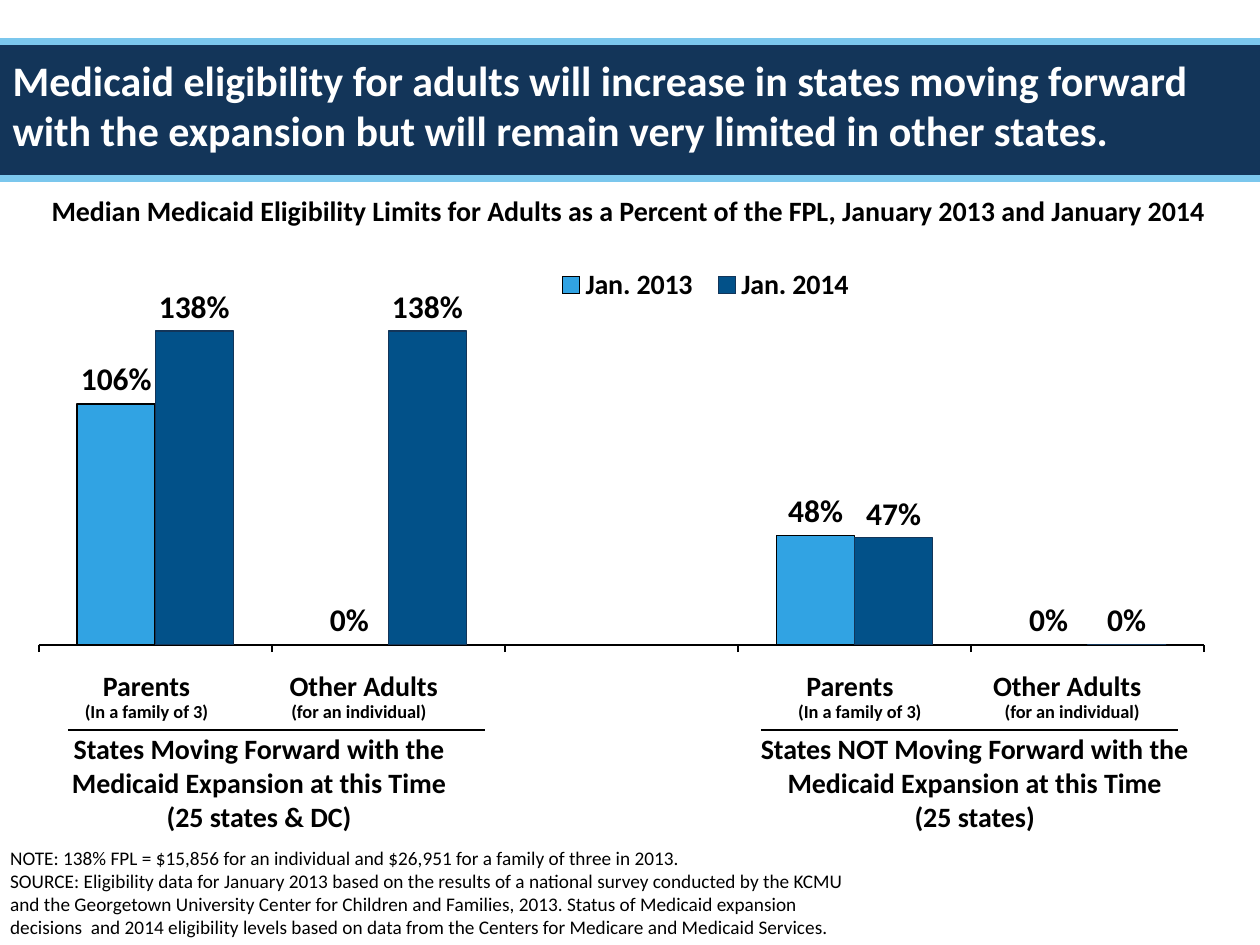
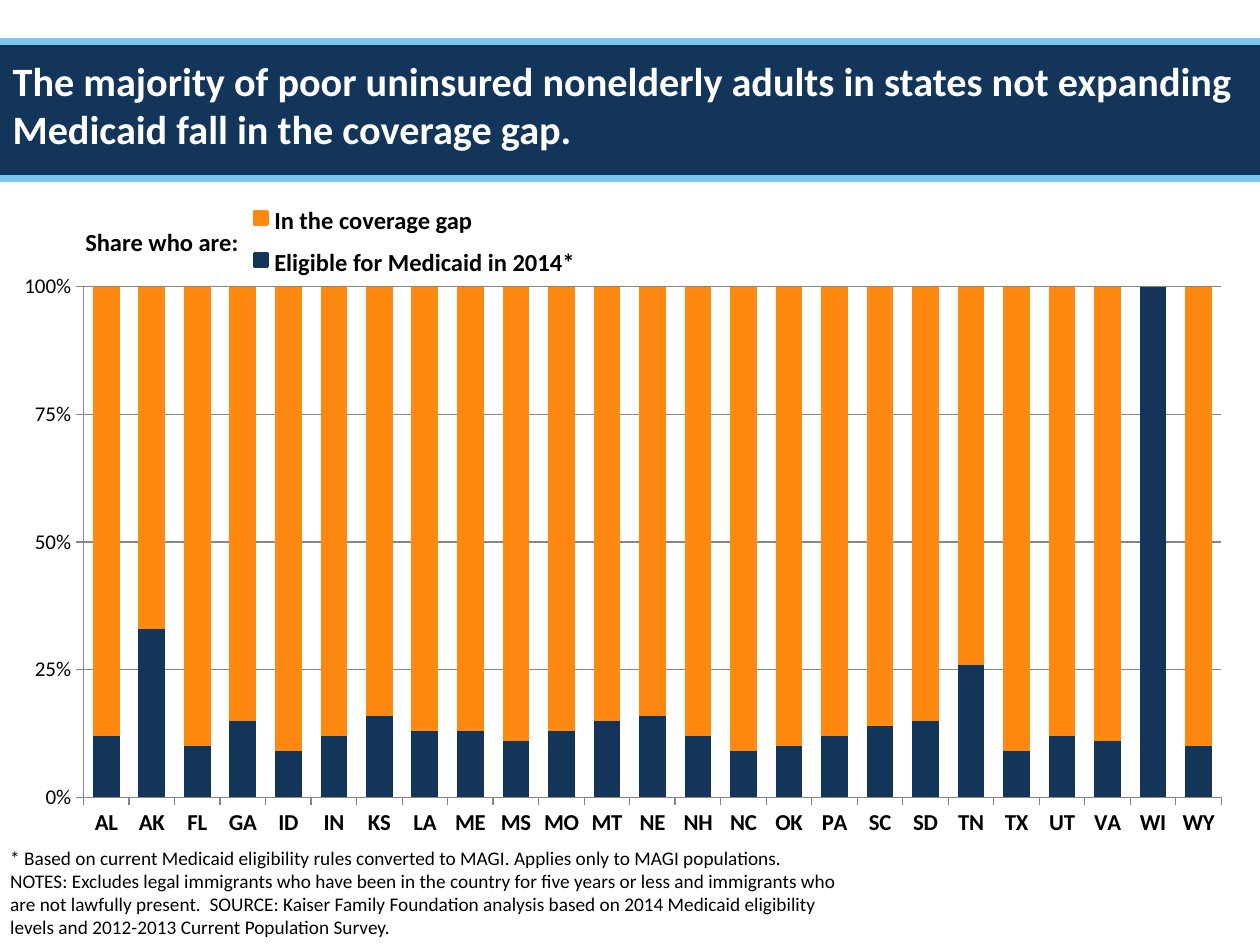
from pptx import Presentation
from pptx.chart.data import CategoryChartData
from pptx.dml.color import RGBColor
from pptx.enum.chart import (XL_CHART_TYPE, XL_LABEL_POSITION, XL_LEGEND_POSITION,
                             XL_TICK_LABEL_POSITION, XL_TICK_MARK)
from pptx.enum.shapes import MSO_CONNECTOR, MSO_SHAPE
from pptx.enum.text import MSO_ANCHOR, MSO_AUTO_SIZE, PP_ALIGN
from pptx.oxml import parse_xml
from pptx.oxml.ns import nsdecls, qn
from pptx.util import Cm, Pt

FONT = "Calibri"
NAVY, SKY, BLACK, WHITE = "133559", "7BC7ED", "000000", "FFFFFF"
BLUE, DEEP_BLUE, ORANGE, GRAY = "31A3E3", "025189", "FF8811", "868686"
SLIDE_WIDTH, BAND_TOP, BAND_BOTTOM = 25.4, 0.84, 3.6

COVERAGE_GAP = "In the coverage gap"
ELIGIBLE = "Eligible for Medicaid in 2014*"
STATES = ("AL AK FL GA ID IN KS LA ME MS MO MT NE NH NC OK PA SC SD TN TX UT VA "
          "WI WY").split()
ELIGIBLE_SHARES = [12, 33, 10, 15, 9, 12, 16, 13, 13, 11, 13, 15, 16, 12, 9, 10, 12,
                   14, 15, 26, 9, 12, 11, 100, 10]
GAP_SHARES = [88, 67, 90, 85, 91, 88, 84, 87, 87, 89, 87, 85, 84, 88, 91, 90, 88,
              86, 85, 74, 91, 88, 89, 0, 90]


def color(hex_code):
    return RGBColor.from_string(hex_code)


def place(shape, left, top, width, height):
    shape.left, shape.top = Cm(left), Cm(top)
    shape.width, shape.height = Cm(width), Cm(height)


def format_font(font, size, ink=BLACK, bold=False):
    font.name, font.size, font.bold = FONT, Pt(size), bold
    font.color.rgb = color(ink)


def write(frame, text, size=16, ink=BLACK, bold=True, align=PP_ALIGN.LEFT,
          anchor=MSO_ANCHOR.TOP, wrap=True):
    """Fill a text frame, one paragraph for each line of the text."""
    frame.word_wrap, frame.auto_size = wrap, MSO_AUTO_SIZE.NONE
    frame.vertical_anchor = anchor
    frame.text = text
    for para in frame.paragraphs:
        para.alignment = align
        para.space_before = Pt(0)
        for span in para.runs:
            format_font(span.font, size, ink, bold)


def add_text(page, text, left, top, width, height, **formats):
    box = page.shapes.add_textbox(Cm(left), Cm(top), Cm(width), Cm(height))
    write(box.text_frame, text, **formats)
    return box


def add_rectangle(page, left, top, width, height, fill, outline=None):
    box = page.shapes.add_shape(MSO_SHAPE.RECTANGLE, Cm(left), Cm(top), Cm(width),
                                Cm(height))
    box.shadow.inherit = False
    box.fill.solid()
    box.fill.fore_color.rgb = color(fill)
    if outline:
        box.line.color.rgb = color(fill)
        box.line.width = Pt(outline)
    else:
        box.line.fill.background()
    return box


def add_rule(page, left, top, length, ink=BLACK, weight=1):
    rule = page.shapes.add_connector(MSO_CONNECTOR.STRAIGHT, Cm(left), Cm(top),
                                     Cm(left + length), Cm(top))
    rule.line.color.rgb = color(ink)
    rule.line.width = Pt(weight)
    rule.element.spPr.append(parse_xml(f"<a:effectLst {nsdecls('a')}/>"))
    return rule


def move_band_to_layout(page, layout):
    """Draw the title band and put it behind everything on the shared layout."""
    band = [add_rectangle(page, 0, BAND_TOP, SLIDE_WIDTH, BAND_BOTTOM - BAND_TOP, NAVY)]
    band += [add_rule(page, 0, top, SLIDE_WIDTH, SKY, 3.7)
             for top in (BAND_TOP, BAND_BOTTOM)]
    for index, shape in enumerate(band, start=2):
        layout.shapes.element.insert(index, shape.element)


def fill_placeholders(page, title, title_size, notes):
    place(page.shapes.title, 0, BAND_TOP, SLIDE_WIDTH, 2.54)
    write(page.shapes.title.text_frame, title, size=title_size, ink=WHITE,
          anchor=MSO_ANCHOR.MIDDLE)
    body = page.placeholders[1]
    place(body, -0.05, 17.53, 17.4, 1.52)
    write(body.text_frame, notes, size=11, bold=False, anchor=MSO_ANCHOR.BOTTOM)
    for para in body.text_frame.paragraphs:
        properties = para._p.get_or_add_pPr()
        properties.set("marL", "0")
        properties.set("indent", "0")
        properties.append(parse_xml(f"<a:buNone {nsdecls('a')}/>"))


def set_layout(element, x, y, width, height, inner=False):
    """Fix a chart part at fractions of the chart's size."""
    old = element.find(qn("c:layout"))
    if old is not None:
        element.remove(old)
    target = '<c:layoutTarget val="inner"/>' if inner else ""
    layout = parse_xml(
        f"<c:layout {nsdecls('c')}><c:manualLayout>{target}"
        '<c:xMode val="edge"/><c:yMode val="edge"/>'
        f'<c:x val="{x}"/><c:y val="{y}"/><c:w val="{width}"/><c:h val="{height}"/>'
        "</c:manualLayout></c:layout>")
    element.insert(0 if element.find(qn("c:legendPos")) is None else 1, layout)


def add_column_chart(page, kind, frame, plot_frame, categories, series, gap):
    """Add a chart; series holds (name, values, fill color) triples."""
    data = CategoryChartData()
    data.categories = categories
    for name, values, _ in series:
        data.add_series(name, values)
    chart = page.shapes.add_chart(kind, *map(Cm, frame), data).chart
    format_font(chart.font, 18)
    chart.has_title = chart.has_legend = False
    chart.element.find(qn("c:chart")).addnext(parse_xml(
        f"<c:spPr {nsdecls('c', 'a')}><a:noFill/><a:ln><a:noFill/></a:ln></c:spPr>"))
    set_layout(chart.element.find(".//" + qn("c:plotArea")), *plot_frame, inner=True)
    plot = chart.plots[0]
    plot.gap_width, plot.vary_by_categories = gap, False
    for column, (_, _, fill) in zip(plot.series, series):
        column.invert_if_negative = False
        column.format.fill.solid()
        column.format.fill.fore_color.rgb = color(fill)
    chart.category_axis.major_tick_mark = XL_TICK_MARK.OUTSIDE
    chart.category_axis.has_major_gridlines = False
    return chart


def add_limits_chart(page):
    chart = add_column_chart(
        page, XL_CHART_TYPE.COLUMN_CLUSTERED, (0.36, 2.97, 24.76, 14.6),
        (0.017, 0.216, 0.949, 0.471), ["1", "2", "3", "4", "5"],
        [("Jan. 2013", (1.06, 0, None, 0.48, 0), BLUE),
         ("Jan. 2014", (1.38, 1.38, None, 0.47, 0), DEEP_BLUE)], gap=99)
    outlines = (BLACK, 1), (NAVY, 0.75)
    for column, (ink, weight) in zip(chart.plots[0].series, outlines):
        column.format.line.color.rgb = color(ink)
        column.format.line.width = Pt(weight)
        labels = column.data_labels
        labels.show_value = True
        labels.number_format, labels.number_format_is_linked = "0%", False
        labels.position = XL_LABEL_POSITION.OUTSIDE_END
        format_font(labels.font, 18, bold=True)
    axis = chart.category_axis
    axis.tick_label_position = XL_TICK_LABEL_POSITION.NONE
    axis.format.line.color.rgb = color(BLACK)
    axis.format.line.width = Pt(1)
    values = chart.value_axis
    values.minimum_scale, values.maximum_scale, values.major_unit = 0, 1.5, 0.5
    values.has_major_gridlines = values.visible = False
    chart.has_legend = True
    chart.legend.position = XL_LEGEND_POSITION.TOP
    chart.legend.include_in_layout = False
    format_font(chart.legend.font, 16, bold=True)
    set_layout(chart.element.find(".//" + qn("c:legend")), 0.43, 0.155, 0.26, 0.07)


def add_shares_chart(page):
    chart = add_column_chart(
        page, XL_CHART_TYPE.COLUMN_STACKED_100, (0, 5.28, 25.15, 11.84),
        (0.067, 0.042, 0.912, 0.87), STATES,
        [(ELIGIBLE, ELIGIBLE_SHARES, NAVY), (COVERAGE_GAP, GAP_SHARES, ORANGE)], gap=70)
    chart.plots[0].overlap = 100
    format_font(chart.category_axis.tick_labels.font, 13, bold=True)
    values = chart.value_axis
    values.minimum_scale, values.maximum_scale, values.major_unit = 0, 1, 0.25
    values.major_tick_mark = XL_TICK_MARK.OUTSIDE
    values.tick_labels.number_format = "0%"
    values.tick_labels.number_format_is_linked = False
    format_font(values.tick_labels.font, 12)
    for part in (values, chart.category_axis, values.major_gridlines):
        part.format.line.color.rgb = color(GRAY)
        part.format.line.width = Pt(0.75)


def add_state_group(page, label_left, detail_left, rule_left, caption_left,
                    caption_width, caption):
    """Label the two pairs of columns of one group of states."""
    center = PP_ALIGN.CENTER
    for text, offset, width in (("Parents", 0, 2.97), ("Other Adults", 3.81, 4.11)):
        box = add_rectangle(page, label_left + offset, 13.36, width, 0.91, WHITE)
        write(box.text_frame, text, align=center)
    for text, offset, width in (("(In a family of 3)", 0, 3.07),
                                ("(for an individual)", 4.01, 3.61)):
        add_text(page, text, detail_left + offset, 14, width, 0.73, size=10.5,
                 align=center, wrap=False)
    add_rule(page, rule_left, 14.71, 8.41)
    add_text(page, caption, caption_left, 14.63, caption_width, 2.31, align=center)


def build_limits_page(page):
    fill_placeholders(
        page, "Medicaid eligibility for adults will increase in states moving forward "
        "with the expansion but will remain very limited in other states.", 24,
        "NOTE: 138% FPL = $15,856 for an individual and $26,951 for a family of three "
        "in 2013.\nSOURCE: Eligibility data for January 2013 based on the results of a "
        "national survey conducted by the KCMU and the Georgetown University Center "
        "for Children and Families, 2013. Status of Medicaid expansion decisions  and "
        "2014 eligibility levels based on data from the Centers for Medicare and "
        "Medicaid Services.")
    add_limits_chart(page)
    add_state_group(page, 1.47, 1.42, 1.37, 1.02, 8.41,
                    "States Moving Forward with the Medicaid Expansion at this Time\n"
                    "(25 states & DC)")
    add_state_group(page, 15.65, 15.8, 15.34, 14.53, 10.24,
                    "States NOT Moving Forward with the Medicaid Expansion at this "
                    "Time\n(25 states)")
    add_text(page, "Median Medicaid Eligibility Limits for Adults as a Percent of the "
             "FPL, January 2013 and January 2014", 0.79, BAND_BOTTOM, 24.6, 1.27,
             anchor=MSO_ANCHOR.MIDDLE)


def build_shares_page(page):
    fill_placeholders(
        page, "The majority of poor uninsured nonelderly adults in states not "
        "expanding Medicaid fall in the coverage gap.", 23,
        "* Based on current Medicaid eligibility rules converted to MAGI. Applies only "
        "to MAGI populations.\nNOTES: Excludes legal immigrants who have been in the "
        "country for five years or less and immigrants who are not lawfully present.  "
        "SOURCE: Kaiser Family Foundation analysis based on 2014 Medicaid eligibility "
        "levels and 2012-2013 Current Population Survey.")
    add_shares_chart(page)
    add_text(page, "Share who are:", 1.47, 4.45, 4.24, 0.86, size=14)
    for row, (text, fill) in enumerate(((COVERAGE_GAP, ORANGE), (ELIGIBLE, NAVY))):
        top = 4.01 + 0.84 * row
        add_text(page, text, 5.28, top, 10.16, 0.86, size=14)
        add_rectangle(page, 5.13, top + 0.26, 0.25, 0.25, fill, outline=2)


def main():
    deck = Presentation()
    deck.slide_width, deck.slide_height = Cm(SLIDE_WIDTH), Cm(19.05)
    layout = deck.slide_layouts[1]
    limits_page, shares_page = (deck.slides.add_slide(layout) for _ in range(2))
    move_band_to_layout(limits_page, layout)
    build_limits_page(limits_page)
    build_shares_page(shares_page)
    deck.save("out.pptx")


if __name__ == "__main__":
    main()
